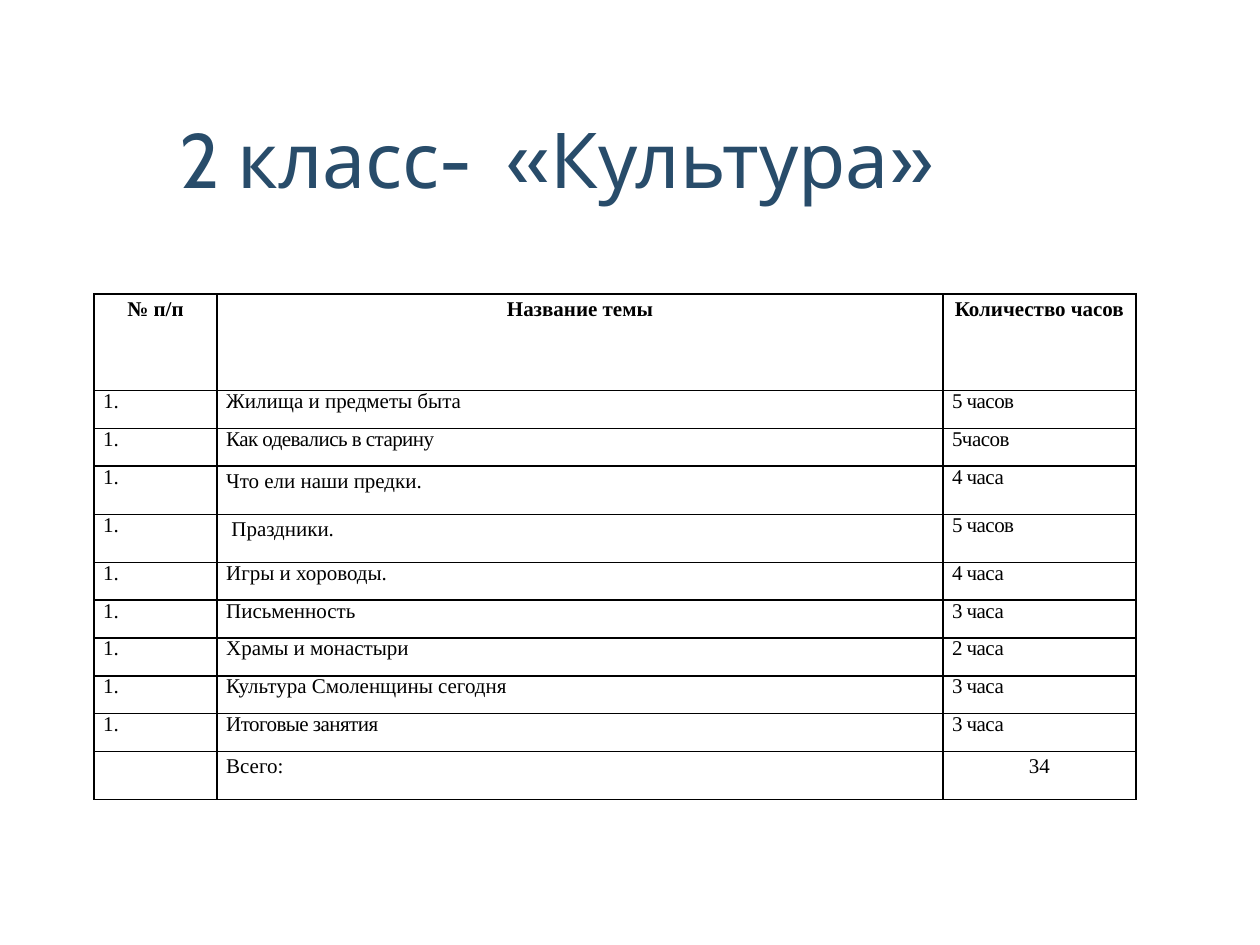
"""Build a slide with the table of topics and hours for the second-grade culture course."""
from pptx import Presentation
from pptx.dml.color import RGBColor
from pptx.enum.text import MSO_ANCHOR, MSO_AUTO_SIZE, PP_ALIGN
from pptx.oxml import parse_xml
from pptx.oxml.ns import nsdecls
from pptx.util import Pt


def style(span, font, size, color, bold=False):
    """Set the look of one run."""
    span.font.name = font
    span.font.size = Pt(size)
    span.font.bold = bold
    span.font.color.rgb = RGBColor.from_string(color)


def add_borders(cell):
    """Draw a thin black line on all four sides of a cell."""
    properties = cell._tc.get_or_add_tcPr()
    for position, side in enumerate(("lnL", "lnR", "lnT", "lnB")):
        properties.insert(position, parse_xml(
            f'<a:{side} {nsdecls("a")} w="12700"><a:solidFill>'
            f'<a:srgbClr val="000000"/></a:solidFill></a:{side}>'))


deck = Presentation()
deck.slide_width, deck.slide_height = Pt(720), Pt(540)
page = deck.slides.add_slide(deck.slide_layouts[5])

title = page.shapes.title
title.left, title.top, title.width, title.height = Pt(36), Pt(54), Pt(636), Pt(72)
frame = title.text_frame
frame.text = "2 класс-  «Культура»"
frame.auto_size = MSO_AUTO_SIZE.NONE
frame.vertical_anchor = MSO_ANCHOR.MIDDLE
heading = frame.paragraphs[0]
heading.alignment = PP_ALIGN.LEFT
heading._p.get_or_add_pPr().set("marL", str(Pt(59.5)))
style(heading.runs[0], "Cabin", 44, "284C6A")

LOOSE, TIGHT = 0, -30
topics = [
    ("Жилища и предметы быта", "5 часов", LOOSE),
    ("Как одевались в старину", "5часов", TIGHT),
    ("Что ели наши предки.", "4 часа", LOOSE),
    (" Праздники.", "5 часов", LOOSE),
    ("Игры и хороводы.", "4 часа", LOOSE),
    ("Письменность", "3 часа", LOOSE),
    ("Храмы и монастыри", "2 часа", LOOSE),
    ("Культура Смоленщины сегодня", "3 часа", LOOSE),
    ("Итоговые занятия", "3 часа", TIGHT),
]
rows = [("№ п/п", "Название темы", "Количество часов")]
rows += [(" ", topic, hours) for topic, hours, spacing in topics]
rows += [("", "Всего:", "34")]
last = len(rows) - 1
tall_rows = (3, 4, last)

holder = page.shapes.add_table(len(rows), 3, Pt(53.7), Pt(168), Pt(595.4), Pt(289.4))
table = holder.table
table.first_row = table.horz_banding = False
for column, width in zip(table.columns, (70.4, 414.8, 110.2)):
    column.width = Pt(width)

for row_number, values in enumerate(rows):
    header = row_number == 0
    table.rows[row_number].height = Pt(55.2 if header else 27.5 if row_number in tall_rows else 21.6)
    for column_number, value in enumerate(values):
        cell = table.cell(row_number, column_number)
        cell.fill.background()
        cell.margin_left = cell.margin_right = Pt(5.2)
        cell.margin_top = cell.margin_bottom = 0
        add_borders(cell)
        cell.text_frame.text = value
        paragraph = cell.text_frame.paragraphs[0]
        if header or row_number == last or (row_number in tall_rows and column_number == 1):
            paragraph.line_spacing = 1.15
        else:
            paragraph.line_spacing = Pt(12.9)
            paragraph.space_after = Pt(10)
        if header or (row_number == last and column_number == 2):
            paragraph.alignment = PP_ALIGN.CENTER
        elif row_number < last:
            paragraph.alignment = PP_ALIGN.JUSTIFY
        if 0 < row_number < last and column_number == 0:
            paragraph._p.get_or_add_pPr().append(parse_xml(
                f'<a:buAutoNum {nsdecls("a")} type="arabicPeriod"/>'))
        paragraph.font.size = Pt(12)
        for span in paragraph.runs:
            style(span, "Times New Roman", 12, "000000", header)
            if 0 < row_number < last and column_number:
                spacing = TIGHT if column_number == 2 else topics[row_number - 1][2]
                span._r.get_or_add_rPr().set("spc", str(spacing))

deck.save("out.pptx")
